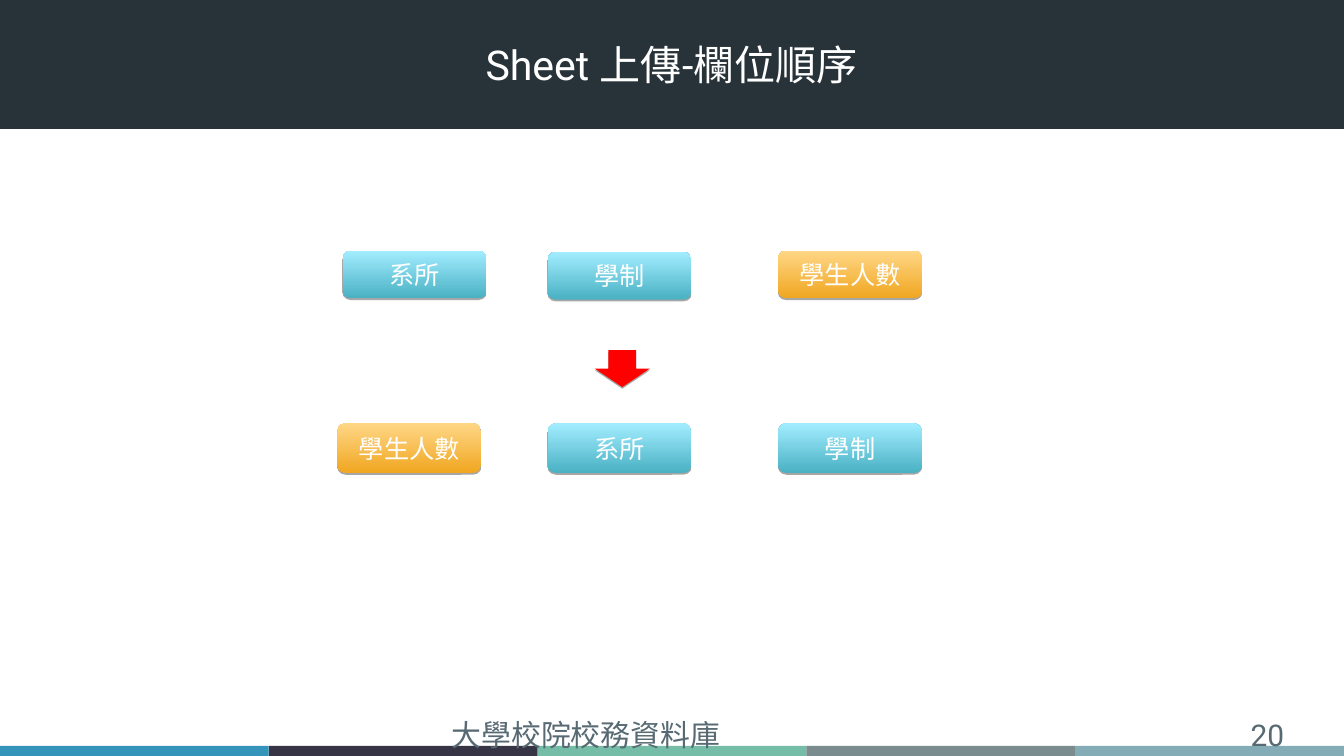
from lxml import etree
from pptx import Presentation
from pptx import util as u
from pptx.dml.color import RGBColor
from pptx.enum import shapes, text
from pptx.oxml import parse_xml
from pptx.oxml.ns import nsdecls, qn

WIDTH, HEIGHT = u.Inches(20), u.Inches(11.25)

WHITE = RGBColor(0xFF, 0xFF, 0xFF)
BAND = RGBColor(0x27, 0x33, 0x39)
GREY = RGBColor(0x57, 0x69, 0x73)
RED = RGBColor(0xFF, 0x00, 0x00)
BLUE = (RGBColor(0x49, 0xB1, 0xC3), RGBColor(0xA2, 0xED, 0xFF))
ORANGE = (RGBColor(0xF0, 0xA6, 0x21), RGBColor(0xFF, 0xD7, 0x86))
STRIPES = [RGBColor.from_string(value) for value in
           ("3494BA", "373545", "75BDA7", "7A8C8E", "84ACB6")]

FIELD_COLOURS = {"系所": BLUE, "學制": BLUE, "學生人數": ORANGE}
FIELD_WIDTH = 10.7


def area(left, top, width, height):
    """Turn percentages of the slide's size into lengths."""
    return (int(WIDTH * left / 100), int(HEIGHT * top / 100),
            int(WIDTH * width / 100), int(HEIGHT * height / 100))


def write(frame, words, size, colour, align, font="Roboto"):
    para = frame.paragraphs[0]
    para.text = words
    para.alignment = align
    para.font.size = u.Pt(size)
    para.font.name = font
    para.font.color.rgb = colour
    east_asian = etree.SubElement(para.font._rPr, qn("a:ea"))
    east_asian.set("typeface", font)


def add_plain(page, kind, box, colour=None):
    shape = page.shapes.add_shape(kind, *area(*box))
    shape.shadow.inherit = False
    shape.line.fill.background()
    if colour is not None:
        shape.fill.solid()
        shape.fill.fore_color.rgb = colour
    return shape


def drop_shadow(shape):
    effects = shape._element.spPr.find(qn("a:effectLst"))
    effects.append(parse_xml(
        f'<a:outerShdw {nsdecls("a")} blurRad="0" dist="{u.Pt(1.8)}" dir="5400000" '
        'rotWithShape="0"><a:srgbClr val="000000"><a:alpha val="35000"/>'
        '</a:srgbClr></a:outerShdw>'))


def add_header(page, box, words):
    left, top, width, height = box
    band = add_plain(page, shapes.MSO_SHAPE.RECTANGLE, box, BAND)
    title = page.shapes.title
    title._element.addprevious(band._element)
    title.left, title.top, title.width, title.height = area(
        left + 6.85, top + 3.74, width - 13.75, 9.78)
    frame = title.text_frame
    frame.auto_size = text.MSO_AUTO_SIZE.NONE
    frame.vertical_anchor = text.MSO_ANCHOR.MIDDLE
    frame.margin_left = frame.margin_right = u.Inches(0.18)
    frame.margin_top = frame.margin_bottom = u.Inches(0.09)
    write(frame, words, 44, WHITE, text.PP_ALIGN.CENTER)


def add_field(page, box, words):
    field = add_plain(page, shapes.MSO_SHAPE.ROUNDED_RECTANGLE, box)
    field.fill.gradient()
    field.fill.gradient_angle = 90
    for stop, colour in zip(field.fill.gradient_stops, FIELD_COLOURS[words]):
        stop.color.rgb = colour
    drop_shadow(field)
    frame = field.text_frame
    frame.vertical_anchor = text.MSO_ANCHOR.MIDDLE
    frame.margin_left = frame.margin_right = u.Inches(0.07)
    frame.margin_top = frame.margin_bottom = u.Inches(0.04)
    write(frame, words, 27, WHITE, text.PP_ALIGN.CENTER, "Noto Sans CJK SC")


def add_order(page, height, fields):
    """Draw one row of fields, given as (left, top, words)."""
    for left, top, words in fields:
        add_field(page, (left, top, FIELD_WIDTH, height), words)


def add_arrow(page, box):
    drop_shadow(add_plain(page, shapes.MSO_SHAPE.DOWN_ARROW, box, RED))


def add_footer(page, box, words, number):
    left, top, width, height = box
    stripe = width / len(STRIPES)
    for index, colour in enumerate(STRIPES):
        add_plain(page, shapes.MSO_SHAPE.RECTANGLE,
                  (left + index * stripe, top + height - 1.33, stripe, 1.33), colour)
    for start, share, label, align in (
            (33.1, 33.75, words, text.PP_ALIGN.LEFT),
            (73.55, 22.5, number, text.PP_ALIGN.RIGHT)):
        note = page.shapes.add_textbox(*area(left + start, top, share, 4.09))
        note.text_frame.word_wrap = True
        write(note.text_frame, label, 32, GREY, align)


def main():
    deck = Presentation()
    deck.slide_width, deck.slide_height = WIDTH, HEIGHT
    page = deck.slides.add_slide(deck.slide_layouts.get_by_name("Title Only"))
    add_header(page, (0, -0.18, 100, 17.24), "Sheet 上傳-欄位順序")
    add_footer(page, (0, 94.31, 100, 5.69), "大學校院校務資料庫", "20")
    add_order(page, 6.31, [(25.5, 33.16, "系所"), (40.75, 33.33, "學制"),
                           (57.9, 33.16, "學生人數")])
    add_arrow(page, (44.25, 46.31, 4.1, 4.89))
    add_order(page, 6.58, [(25.1, 56, "學生人數"), (40.75, 56, "系所"),
                           (57.9, 56, "學制")])
    deck.save("out.pptx")


if __name__ == "__main__":
    main()
